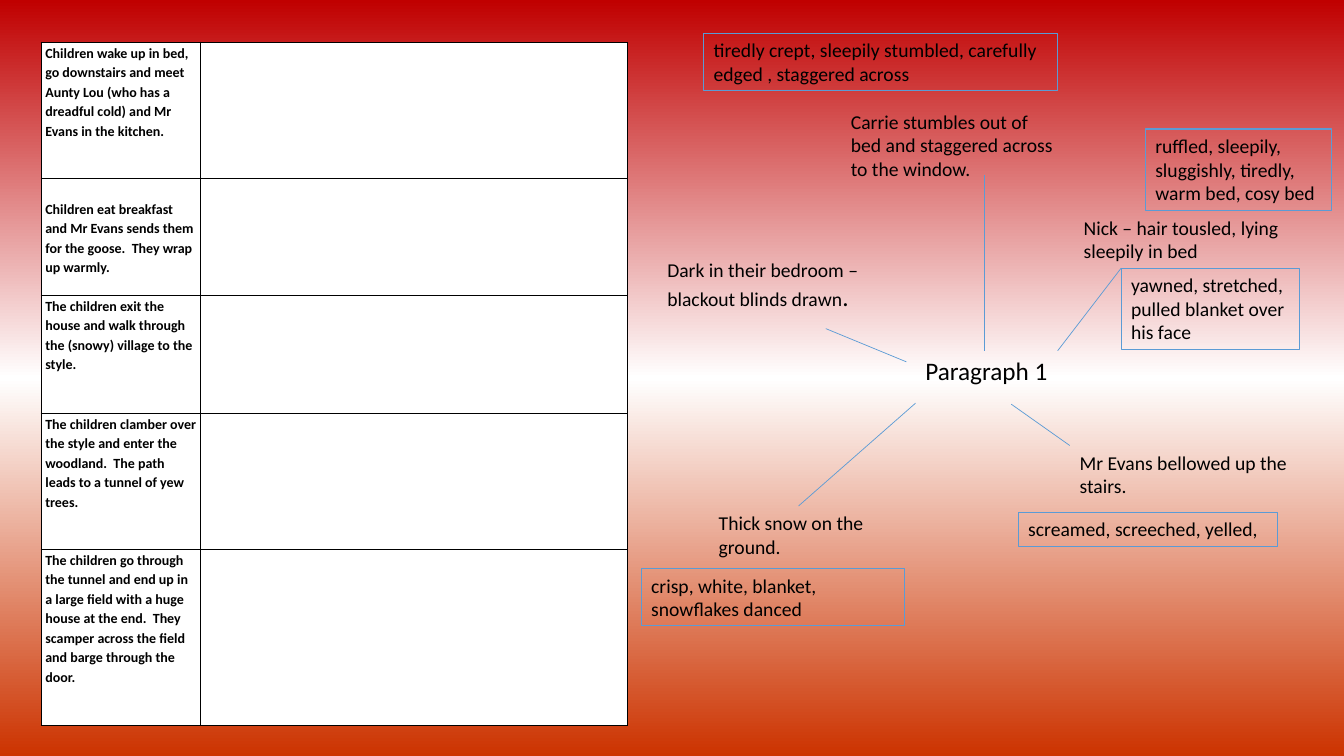
import copy
import pptx
import pptx.util
import pptx.dml.color
import pptx.enum.shapes
import pptx.enum.text
import pptx.oxml
import pptx.oxml.ns
import lxml.etree

Inches = pptx.util.Inches
Pt = pptx.util.Pt
qn = pptx.oxml.ns.qn

BLUE = "5B9BD5"
BLACK = "000000"

PLOT = [
    (1.35, 0, "Children wake up in bed, go downstairs and meet Aunty Lou (who has a dreadful cold) and Mr Evans in the kitchen."),
    (1.16, 0.2, "Children eat breakfast and Mr Evans sends them for the goose.  They wrap up warmly."),
    (1.17, 0, "The children exit the house and walk through the (snowy) village to the style."),
    (1.35, 0, "The children clamber over the style and enter the woodland.  The path leads to a tunnel of yew trees."),
    (1.75, 0, "The children go through the tunnel and end up in a large field with a huge house at the end.  They scamper across the field and barge through the door."),
]

IDEAS = [
    (0.16, 2.18, 2.47, 0.64, [("Dark in their bedroom – blackout blinds drawn", 14), (".", 18)]),
    (1.98, 0.71, 2.22, 0.81, [("Carrie stumbles out of bed and staggered across to the window.", 14)]),
    (4.29, 1.76, 2.2, 0.57, [("Nick – hair tousled, lying sleepily in bed", 14)]),
    (4.25, 4.09, 2.28, 0.57, [("Mr Evans bellowed up the stairs.", 14)]),
    (2.72, 3.15, 1.6, 0.4, [("Paragraph 1", 18)]),
]

SNOW = (0.67, 4.69, 1.78, 0.57, [("Thick snow on the ground.", 14)])

SPOKES = [
    (3.4, 3.15, 3.4, 1.41),
    (4.13, 3.15, 4.76, 2.33),
    (2.63, 3.26, 1.83, 2.93),
    (3.67, 3.68, 4.25, 4.09),
]

WORD_BANKS = [
    (0.62, 0, 3.51, 0.57, "tiredly crept, sleepily stumbled, carefully edged , staggered across"),
    (5, 0.95, 1.85, 0.81, "ruffled, sleepily, sluggishly, tiredly, warm bed, cosy bed"),
    (3.74, 4.75, 2.57, 0.34, "screamed, screeched, yelled,"),
    (4.76, 2.33, 1.77, 0.81, "yawned, stretched, pulled blanket over his face"),
    (0, 5.31, 2.61, 0.57, "crisp, white, blanket, snowflakes danced"),
]


def rgb(color):
    return pptx.dml.color.RGBColor.from_string(color)


def add_run(p, text, size, bold=False):
    r = p.add_run()
    r.text = text
    r.font.name = "Calibri"
    r.font.size = Pt(size)
    r.font.bold = bold
    r.font.color.rgb = rgb(BLACK)


def fill_text(sp, runs):
    tf = sp.text_frame
    tf.word_wrap = True
    tf.vertical_anchor = pptx.enum.text.MSO_ANCHOR.TOP
    p = tf.paragraphs[0]
    p.alignment = pptx.enum.text.PP_ALIGN.LEFT
    for text, size in runs:
        add_run(p, text, size)


def paint_background(s):
    fill = s.background.fill
    fill.gradient()
    fill.gradient_angle = 270
    stops = s.element.find(".//" + qn("a:gsLst"))
    stops.insert(1, copy.deepcopy(stops[0]))
    for stop, position, color in zip(fill.gradient_stops, (0, 0.5, 1), ("C00000", "FFFFFF", "CC3300")):
        stop.position = position
        stop.color.rgb = rgb(color)


def style_cell(cell):
    tc_pr = cell._tc.get_or_add_tcPr()
    for side in ("a:lnL", "a:lnR", "a:lnT", "a:lnB"):
        ln = lxml.etree.SubElement(tc_pr, qn(side), w=str(Pt(1)))
        solid = lxml.etree.SubElement(ln, qn("a:solidFill"))
        lxml.etree.SubElement(solid, qn("a:srgbClr"), val=BLACK)
    cell.fill.solid()
    cell.fill.fore_color.rgb = rgb("FFFFFF")
    cell.margin_left = cell.margin_right = Inches(0.04)
    cell.margin_top = cell.margin_bottom = 0


def plot_table(s, x, y, w, h):
    frame = s.shapes.add_table(len(PLOT), 2, Inches(x), Inches(y), Inches(w), Inches(h))
    table = frame.table
    table.first_row = False
    table.horz_banding = False
    table.columns[0].width = Inches(1.58)
    table.columns[1].width = Inches(w - 1.58)
    for row, (height, top, text) in zip(table.rows, PLOT):
        row.height = Inches(height)
        for cell in row.cells:
            style_cell(cell)
        cell = row.cells[0]
        cell.margin_top = Inches(top)
        p = cell.text_frame.paragraphs[0]
        p.line_spacing = 1.15
        add_run(p, text, 10, True)


def idea(s, x, y, w, h, runs):
    sp = s.shapes.add_textbox(Inches(x), Inches(y), Inches(w), Inches(h))
    fill_text(sp, runs)
    return sp


def spoke(s, x1, y1, x2, y2):
    line = s.shapes.add_connector(pptx.enum.shapes.MSO_CONNECTOR.STRAIGHT,
                                  Inches(x1), Inches(y1), Inches(x2), Inches(y2))
    line.line.color.rgb = rgb(BLUE)
    line.line.width = Pt(0.5)
    lxml.etree.SubElement(line._element.spPr, qn("a:effectLst"))
    return line


def word_bank(s, x, y, w, h, text):
    sp = s.shapes.add_shape(pptx.enum.shapes.MSO_SHAPE.RECTANGLE,
                            Inches(x), Inches(y), Inches(w), Inches(h))
    sp.shadow.inherit = False
    sp.fill.background()
    sp.line.color.rgb = rgb(BLUE)
    sp.line.width = Pt(0.75)
    fill_text(sp, [(text, 14)])


def mind_map(s, x, y):
    for dx, dy, w, h, runs in IDEAS:
        idea(s, x + dx, y + dy, w, h, runs)
    dx, dy, w, h, runs = SNOW
    snow = idea(s, x + dx, y + dy, w, h, runs)
    for x1, y1, x2, y2 in SPOKES:
        spoke(s, x + x1, y + y1, x + x2, y + y2)
    spoke(s, x + 2.72, y + 3.67, x + dx + w / 2, y + dy).end_connect(snow, 0)
    for dx, dy, w, h, text in WORD_BANKS:
        word_bank(s, x + dx, y + dy, w, h, text)


def main():
    prs = pptx.Presentation()
    prs.slide_width = Inches(13.33)
    prs.slide_height = Inches(7.5)
    s = prs.slides.add_slide(prs.slide_layouts[6])
    paint_background(s)
    plot_table(s, 0.41, 0.42, 5.81, 6.78)
    mind_map(s, 6.36, 0.33)
    prs.save("out.pptx")


if __name__ == "__main__":
    main()
